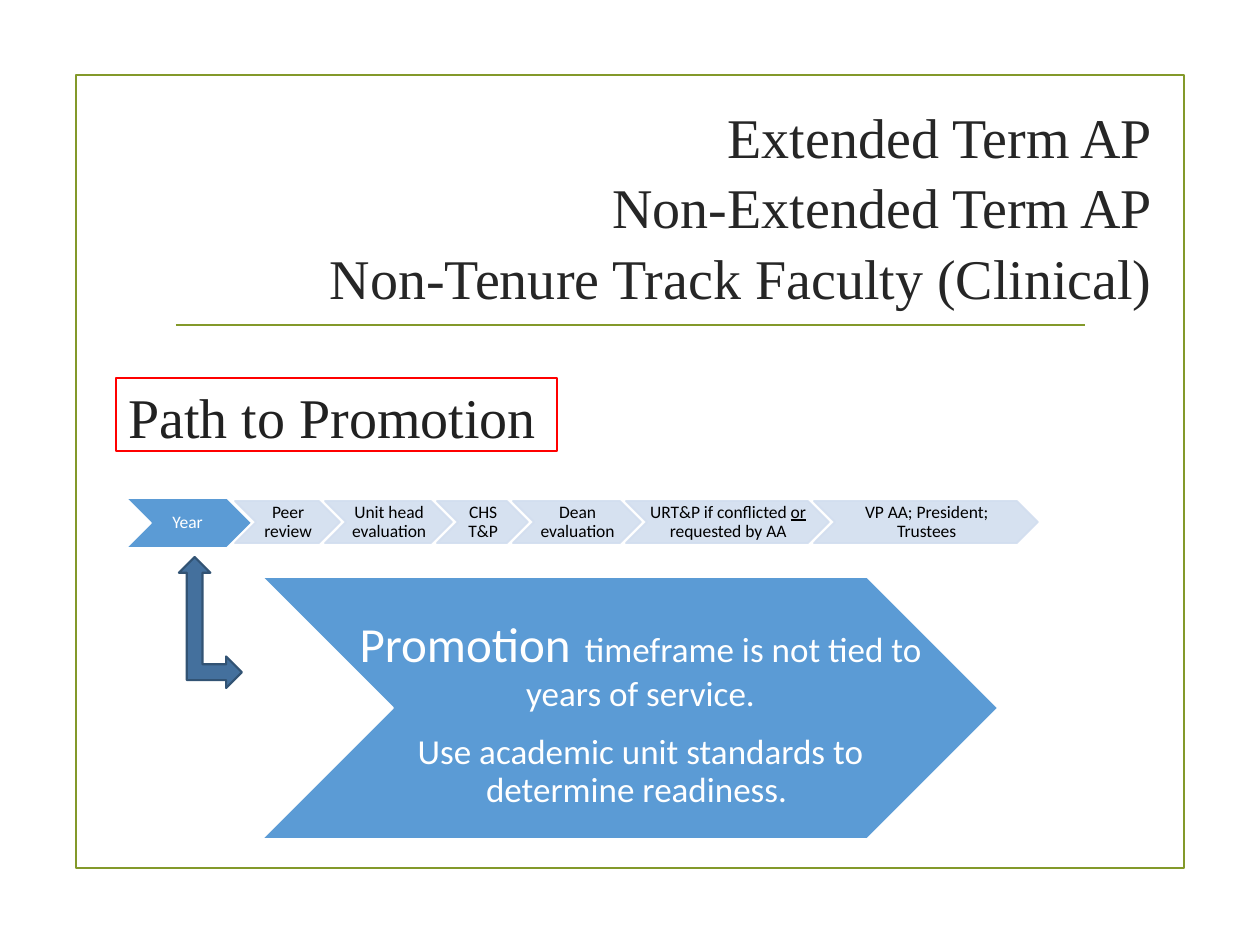
from pptx import Presentation, util as u
from pptx.dml.color import RGBColor
from pptx.enum import shapes, text
from pptx.oxml.ns import qn
from lxml import etree

PX = 914400 / 126

OLIVE = RGBColor(0x83, 0x99, 0x2A)
RED = RGBColor(0xFF, 0, 0)
WHITE = RGBColor(0xFF, 0xFF, 0xFF)
BLACK = RGBColor(0, 0, 0)
TITLE_INK = RGBColor(0x26, 0x26, 0x26)
PATH_INK = RGBColor(0x21, 0x21, 0x21)
BLUE = RGBColor(0x5B, 0x9B, 0xD5)
PALE = RGBColor(0xD2, 0xDE, 0xEF)
ARROW_FILL = RGBColor(0x44, 0x70, 0x9D)
ARROW_EDGE = RGBColor(0x32, 0x53, 0x74)

SERIF, SANS = "Times New Roman", "Calibri"
KIND = shapes.MSO_SHAPE
LEFT, CENTER, RIGHT = text.PP_ALIGN.LEFT, text.PP_ALIGN.CENTER, text.PP_ALIGN.RIGHT

# A paragraph is a list of runs: (wording, size) or (wording, size, underlined).
TITLE = [[("Extended Term AP\nNon-Extended Term AP\n"
           "Non-Tenure Track Faculty (Clinical)", 32)]]
PATH = [[("Path to Promotion", 32)]]
YEAR = [[("Year ", 10)]]
REVIEW_STEPS = [  # chevron width in px, runs
    (105, [("Peer review", 10)]),
    (127, [("Unit head evaluation", 10)]),
    (91, [("CHS T&P", 10)]),
    (128, [("Dean evaluation", 10)]),
    (203, [("URT&P if conflicted ", 10), ("or", 10, True), (" requested by AA", 10)]),
    (224, [("VP AA; President; Trustees", 10)]),
]
PROMOTION = [
    [("Promotion", 28), (" ", 36), ("timeframe is not tied to years of service.", 20)],
    [("Use academic unit standards to determine readiness. ", 20)],
]
STEP_LEFT, STEP_TOP, STEP_HEIGHT, STEP_OVERLAP = 235, 501, 42, 15

prs = Presentation()
prs.slide_width, prs.slide_height = u.Inches(10), u.Inches(7.5)
slide = prs.slides.add_slide(prs.slide_layouts[6])


def emu(*lengths):
    return [round(length * PX) for length in lengths]


def set_alpha(color_format_parent, percent):
    for color in color_format_parent.iter(qn("a:srgbClr")):
        etree.SubElement(color, qn("a:alpha")).set("val", str(percent * 1000))


def add_shape(kind, box, fill, edge, width):
    shape = slide.shapes.add_shape(kind, *emu(*box))
    shape.shadow.inherit = False
    if fill is None:
        shape.fill.background()
    else:
        shape.fill.solid()
        shape.fill.fore_color.rgb = fill
    shape.line.color.rgb = edge
    shape.line.width = u.Pt(width)
    return shape


def write(shape, paragraphs, font, ink, align, spacing, gap=0):
    """Fill a shape with runs; gap is the space in points between paragraphs."""
    frame = shape.text_frame
    frame.word_wrap = True
    frame.vertical_anchor = text.MSO_ANCHOR.MIDDLE
    for index, runs in enumerate(paragraphs):
        paragraph = frame.add_paragraph() if index else frame.paragraphs[0]
        paragraph.alignment = align
        paragraph.line_spacing = spacing
        if index:
            paragraph.space_before = u.Pt(gap)
        for wording, size, *underlined in runs:
            for number, line in enumerate(wording.split("\n")):
                if number:
                    paragraph.add_line_break()
                run = paragraph.add_run()
                run.text = line
                run.font.name, run.font.size = font, u.Pt(size)
                run.font.color.rgb = ink
                if underlined:
                    run.font.underline = True


def add_label(box, paragraphs, ink, gap=0):
    label = slide.shapes.add_textbox(*emu(*box))
    frame = label.text_frame
    frame.margin_left = frame.margin_top = frame.margin_bottom = u.Inches(0.01)
    frame.margin_right = 0
    write(label, paragraphs, SANS, ink, CENTER, 0.9, gap)


def add_step(left, top, width, height, runs, fill, edge, ink):
    """Draw a chevron with its label between the two slanted ends."""
    chevron = add_shape(KIND.CHEVRON, (left, top, width, height), fill, edge, 1)
    slant = height // 2
    add_label((left + slant, top, width - 2 * slant, height), runs, ink)
    return chevron


# Frame and title
add_shape(KIND.RECTANGLE, (76, 75, 1108, 793), None, OLIVE, 1.25)
rule = slide.shapes.add_connector(shapes.MSO_CONNECTOR.STRAIGHT, *emu(176, 325, 1085, 325))
rule.line.color.rgb, rule.line.width = OLIVE, u.Pt(1.25)
etree.SubElement(rule.line._get_or_add_ln().getparent(), qn("a:effectLst"))
title = slide.shapes.add_textbox(*emu(95, 84, 1070, 242))
write(title, TITLE, SERIF, TITLE_INK, RIGHT, 1.05)

# Review path
add_step(126, 498, 126, 50, YEAR, BLUE, WHITE, WHITE)
left = STEP_LEFT
for width, runs in REVIEW_STEPS:
    step = add_step(left, STEP_TOP, width, STEP_HEIGHT, [runs], PALE, PALE, BLACK)
    set_alpha(step.element.spPr, 90)
    left += width - STEP_OVERLAP
path_box = add_shape(KIND.RECTANGLE, (116, 378, 441, 73), WHITE, RED, 1.25)
write(path_box, PATH, SERIF, PATH_INK, LEFT, 1.05)

# Promotion note
add_shape(KIND.CHEVRON, (262, 577, 736, 262), BLUE, WHITE, 1)
add_label((352, 590, 576, 238), PROMOTION, WHITE, gap=12)
elbow = add_shape(KIND.LEFT_UP_ARROW, (179, 557, 63, 131), ARROW_FILL, ARROW_EDGE, 1.25)
elbow.element.spPr.find(qn("a:xfrm")).set("flipH", "1")

prs.save("out.pptx")
